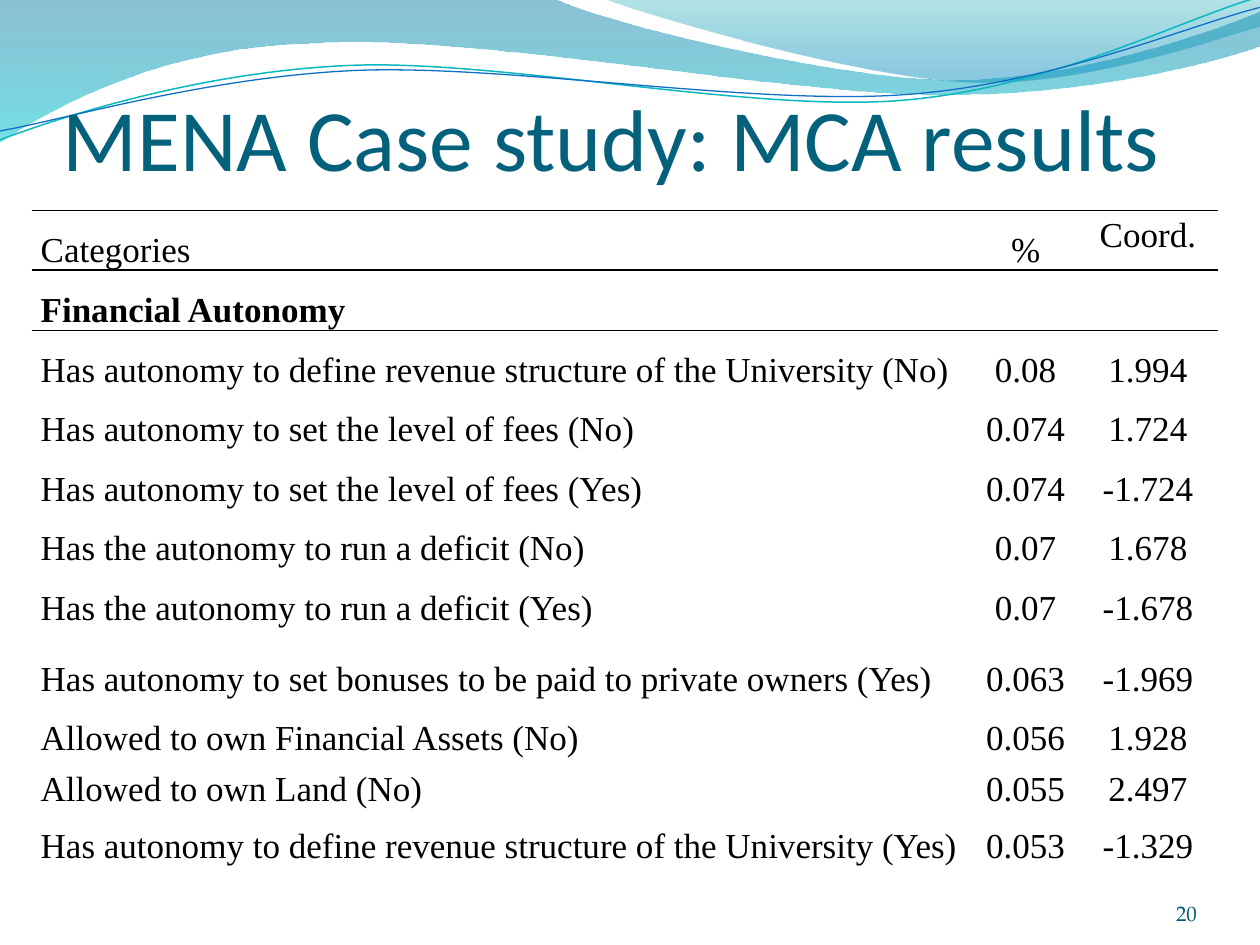
import pptx
import pptx.dml.color
import pptx.enum.text
import pptx.oxml
import pptx.oxml.ns
import pptx.util
from pptx.util import Cm

COLORS = {
    "title": "04617B", "number": "045D75", "text": "000000", "rule": "000000",
    "band_top": "0074A1", "band_bottom": "00C6CF",
    "crest_top": "00A1A9", "crest_bottom": "008BBF",
    "teal_line": "0AB8BF", "blue_line": "0F6FC6",
}
ALIGN = pptx.enum.text.PP_ALIGN
ANCHOR = pptx.enum.text.MSO_ANCHOR
NAMESPACE = pptx.oxml.ns.nsdecls("a")
PLAIN_TABLE_STYLE = "{2D5ABB26-0587-4C30-8999-92F81FD0307C}"

BAND = [(0, 0), (11.18, -0.03), (12.09, 0.43, 16.87, 1.6, 19.25, 1.6),
        (21.67, 1.6, 24.33, 0.66, 25.4, 0.23), (25.43, 0.91),
        (24.97, 1.12, 22.1, 1.93, 18.95, 1.91), (15.8, 1.91, 9.7, 0.71, 6.53, 0.86),
        (3.28, 0.91, 1.17, 2.11, -0.03, 2.87)]
CREST = [(12.17, -0.03), (12.93, 0.28, 17.32, 1.57, 19.53, 1.65),
         (21.74, 1.75, 24.41, 0.81, 25.4, 0.53), (25.4, 0)]
TEAL_LINE = [(0, 2.82), (1.22, 2.36, 4.01, 1.45, 7.04, 1.32),
             (10.03, 1.19, 15.06, 2.26, 18.11, 2.03),
             (21.16, 1.8, 23.83, 0.38, 25.35, -0.05)]
BLUE_LINE = [(0, 2.64), (1.19, 2.44, 4.17, 1.55, 7.19, 1.42),
             (10.24, 1.3, 15.16, 2.13, 18.21, 1.91),
             (21.23, 1.7, 23.9, 0.53, 25.4, 0.15)]

COLUMN_WIDTHS = [18.98, 2.11, 2.82]
ROW_HEIGHT = 1.2
SPECIAL_HEIGHTS = {1: 1.22, 7: 1.43, 9: 1.02, 10: 1.15, 11: 1.02}
ROWS = [
    ("Categories", "%", "Coord."),
    ("Financial Autonomy", "", ""),
    ("Has autonomy to define revenue structure of the University (No)", "0.08", "1.994"),
    ("Has autonomy to set the level of fees (No)", "0.074", "1.724"),
    ("Has autonomy to set the level of fees (Yes)", "0.074", "-1.724"),
    ("Has the autonomy to run a deficit (No)", "0.07", "1.678"),
    ("Has the autonomy to run a deficit (Yes)", "0.07", "-1.678"),
    ("Has autonomy to set bonuses to be paid to private owners (Yes)", "0.063", "-1.969"),
    ("Allowed to own Financial Assets (No)", "0.056", "1.928"),
    ("Allowed to own Land (No)", "0.055", "2.497"),
    ("Has autonomy to define revenue structure of the University (Yes)", "0.053", "-1.329"),
    ("", "", ""),
    ("", "", ""),
]


def rgb(name):
    """Return the named colour."""
    return pptx.dml.color.RGBColor.from_string(COLORS[name])


def write_text(frame, text, font="Calibri", size=20, color="text", bold=False,
               align=ALIGN.LEFT, spacing=None):
    """Write one formatted paragraph into a text frame."""
    para = frame.paragraphs[0]
    para.alignment = align
    if spacing:
        para.line_spacing = spacing
    span = para.add_run()
    span.text = text
    span.font.name = font
    span.font.size = pptx.util.Pt(size)
    span.font.bold = bold
    span.font.color.rgb = rgb(color)


def bend(shape, path):
    """Merge each three line steps of a curved segment into one cubic curve."""
    steps = iter(list(shape.element.iter(pptx.oxml.ns.qn("a:lnTo"))))
    for segment in path[1:]:
        first = next(steps)
        if len(segment) == 2:
            continue
        curve = pptx.oxml.parse_xml(f"<a:cubicBezTo {NAMESPACE}/>")
        first.addprevious(curve)
        for step in (first, next(steps), next(steps)):
            curve.append(step[0])
            step.getparent().remove(step)


def add_outline(page, box, path, close):
    """Draw a path given in centimetres from the corner of the box."""
    points = [(Cm(box[0] + segment[i]), Cm(box[1] + segment[i + 1]))
              for segment in path for i in range(0, len(segment), 2)]
    builder = page.shapes.build_freeform(*points[0])
    builder.add_line_segments(points[1:], close=close)
    shape = builder.convert_to_shape()
    shape.shadow.inherit = False
    bend(shape, path)
    return shape


def add_wave(page, box, path, stops):
    """Draw a translucent wave shaded from top to bottom."""
    shape = add_outline(page, box, path, True)
    shape.line.fill.background()
    shape.fill.gradient()
    shape.fill.gradient_angle = 270
    for stop, (position, color, _) in zip(shape.fill.gradient_stops, stops):
        stop.position = position
        stop.color.rgb = rgb(color)
    tag = pptx.oxml.ns.qn("a:srgbClr")
    for element, (_, _, opacity) in zip(shape.element.spPr.iter(tag), stops):
        element.append(pptx.oxml.parse_xml(
            f'<a:alpha {NAMESPACE} val="{opacity * 1000}"/>'))


def add_wave_line(page, box, path, color, width):
    """Draw an open curved line."""
    shape = add_outline(page, box, path, False)
    shape.fill.background()
    shape.line.color.rgb = rgb(color)
    shape.line.width = pptx.util.Pt(width)


def add_header_waves(page, box):
    """Draw the waves along the top of the page."""
    add_wave(page, box, BAND, [(0, "band_top", 45), (1, "band_bottom", 55)])
    add_wave(page, box, CREST, [(0, "crest_top", 30), (0.8, "crest_bottom", 45)])
    add_wave_line(page, box, TEAL_LINE, "teal_line", 0.85)
    add_wave_line(page, box, BLUE_LINE, "blue_line", 0.75)


def add_label(page, box, text, top_inset=0, **style):
    """Place bottom-anchored text in the box."""
    frame = page.shapes.add_textbox(*map(Cm, box)).text_frame
    frame.word_wrap = True
    frame.vertical_anchor = ANCHOR.BOTTOM
    frame.margin_left = frame.margin_right = frame.margin_bottom = 0
    frame.margin_top = Cm(top_inset)
    write_text(frame, text, **style)


def add_border(cell, side):
    """Add a thin rule to the T or B side of a cell."""
    cell._tc.get_or_add_tcPr().append(pptx.oxml.parse_xml(
        f'<a:ln{side} {NAMESPACE} w="12700"><a:solidFill>'
        f'<a:srgbClr val="{COLORS["rule"]}"/></a:solidFill></a:ln{side}>'))


def add_results_table(page, box):
    """Fill the box with the table of categories and coordinates."""
    frame = page.shapes.add_table(len(ROWS), len(COLUMN_WIDTHS), *map(Cm, box))
    table = frame.table
    table.first_row = table.horz_banding = False
    style = next(frame.element.iter(pptx.oxml.ns.qn("a:tableStyleId")))
    style.text = PLAIN_TABLE_STYLE
    for column, width in zip(table.columns, COLUMN_WIDTHS):
        column.width = Cm(width)
    for row, values in enumerate(ROWS):
        table.rows[row].height = Cm(SPECIAL_HEIGHTS.get(row, ROW_HEIGHT))
        for column, text in enumerate(values):
            cell = table.cell(row, column)
            cell.margin_left = cell.margin_right = Cm(0.18)
            cell.margin_top = cell.margin_bottom = 0
            top_anchored = (row, column) == (0, 2)
            cell.vertical_anchor = ANCHOR.TOP if top_anchored else ANCHOR.BOTTOM
            for side in {0: "TB", 1: "T"}.get(row, ""):
                add_border(cell, side)
            cell.fill.background()
            if text:
                write_text(cell.text_frame, text, font="Times New Roman", bold=row == 1,
                           align=ALIGN.CENTER if column else ALIGN.LEFT, spacing=1.15)


def main():
    """Build the slide and save it."""
    deck = pptx.Presentation()
    deck.slide_width, deck.slide_height = Cm(25.4), Cm(19.05)
    page = deck.slides.add_slide(deck.slide_layouts[6])
    add_header_waves(page, (0, 0))
    add_label(page, (1.27, 0.64, 22.86, 3.18), "MENA Case study: MCA results",
              top_inset=0.13, size=50, color="title")
    add_label(page, (22.02, 17.65, 2.11, 1.02), "20", font="TeX Gyre Pagella",
              size=12, color="number", align=ALIGN.RIGHT)
    add_results_table(page, (0.64, 4.24, 23.91, 15.44))
    deck.save("out.pptx")


if __name__ == "__main__":
    main()
